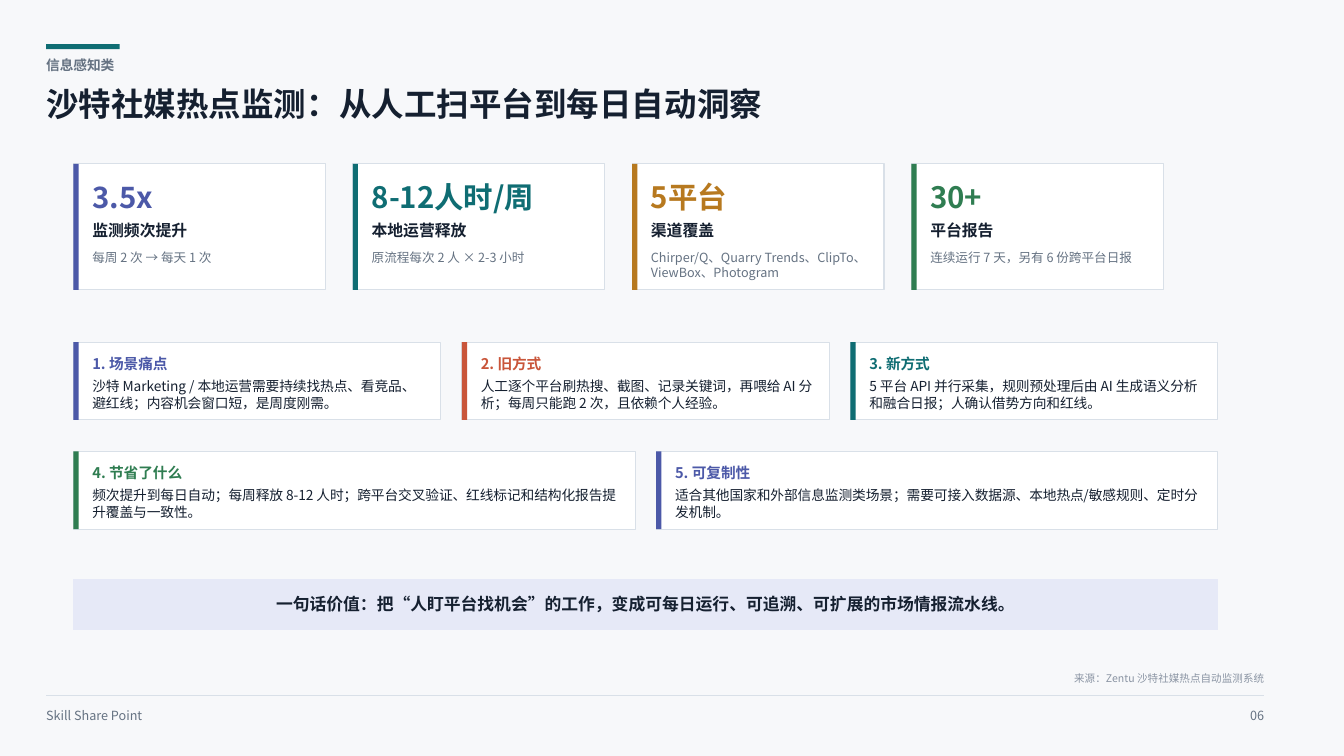
from lxml import etree
from pptx import Presentation
from pptx import util as u
from pptx.dml import color
from pptx.enum import shapes, text
from pptx.oxml import ns

COLS, ROWS = 640, 360
FONT = "Noto Sans CJK SC"
COLORS = {
    "page": "F7F8FA", "card": "FFFFFF", "rule": "D9E0E8", "band": "E6E9F7",
    "ink": "152030", "muted": "657282", "faint": "8A94A3",
    "indigo": "4C59A8", "teal": "0F6D73", "amber": "B7791F",
    "green": "2F7D51", "rust": "C9553A",
}
LEFT, RIGHT = 22, 602
BODY_LEFT, BODY_WIDTH = 35, 545
CARD_INDENT = 9

METRICS = [
    ("3.5x", "监测频次提升", "每周 2 次 → 每天 1 次", "indigo"),
    ("8-12人时/周", "本地运营释放", "原流程每次 2 人 × 2-3 小时", "teal"),
    ("5平台", "渠道覆盖", "Chirper/Q、Quarry Trends、ClipTo、ViewBox、Photogram", "amber"),
    ("30+", "平台报告", "连续运行 7 天，另有 6 份跨平台日报", "green"),
]
POINT_ROWS = [
    (163, [
        ("1. 场景痛点", "沙特 Marketing / 本地运营需要持续找热点、看竞品、避红线；"
         "内容机会窗口短，是周度刚需。", "indigo"),
        ("2. 旧方式", "人工逐个平台刷热搜、截图、记录关键词，再喂给 AI 分析；"
         "每周只能跑 2 次，且依赖个人经验。", "rust"),
        ("3. 新方式", "5 平台 API 并行采集，规则预处理后由 AI 生成语义分析和融合日报；"
         "人确认借势方向和红线。", "teal"),
    ]),
    (215, [
        ("4. 节省了什么", "频次提升到每日自动；每周释放 8-12 人时；"
         "跨平台交叉验证、红线标记和结构化报告提升覆盖与一致性。", "green"),
        ("5. 可复制性", "适合其他国家和外部信息监测类场景；"
         "需要可接入数据源、本地热点/敏感规则、定时分发机制。", "indigo"),
    ]),
]


def rgb(name):
    return color.RGBColor.from_string(COLORS[name])


class Board:
    """A slide laid out on a grid of COLS by ROWS cells."""

    def __init__(self, deck):
        self.cell_w = deck.slide_width / COLS
        self.cell_h = deck.slide_height / ROWS
        self.slide = deck.slides.add_slide(deck.slide_layouts[5])
        backdrop = self.slide.background.fill
        backdrop.solid()
        backdrop.fore_color.rgb = rgb("page")

    def place(self, col, row, cols, rows):
        return (round(col * self.cell_w), round(row * self.cell_h),
                round(cols * self.cell_w), round(rows * self.cell_h))

    def style(self, frame, words, size, ink, bold=False, align="LEFT"):
        frame.text = words
        frame.word_wrap = True
        frame.auto_size = text.MSO_AUTO_SIZE.NONE
        frame.vertical_anchor = text.MSO_ANCHOR.TOP
        frame.margin_left = frame.margin_right = 0
        frame.margin_top = frame.margin_bottom = 0
        paragraph = frame.paragraphs[0]
        paragraph.alignment = getattr(text.PP_ALIGN, align)
        for run in paragraph.runs:
            run.font.name = FONT
            run.font.size = u.Pt(size)
            run.font.bold = bold
            run.font.color.rgb = rgb(ink)
            east_asian = etree.Element(ns.qn("a:ea"), typeface=FONT)
            run.font._element.find(ns.qn("a:latin")).addnext(east_asian)

    def title(self, area, words):
        heading = self.slide.shapes.title
        heading.left, heading.top, heading.width, heading.height = self.place(*area)
        self.style(heading.text_frame, words, 23.25, "ink", True)

    def label(self, area, words, size, ink, bold=False, align="LEFT"):
        box = self.slide.shapes.add_textbox(*self.place(*area))
        self.style(box.text_frame, words, size, ink, bold, align)

    def block(self, area, fill, outline=None):
        rect = self.slide.shapes.add_shape(shapes.MSO_SHAPE.RECTANGLE, *self.place(*area))
        rect.shadow.inherit = False
        rect.fill.solid()
        rect.fill.fore_color.rgb = rgb(fill)
        if outline:
            rect.line.color.rgb = rgb(outline)
            rect.line.width = u.Pt(0.75)
        else:
            rect.line.fill.background()

    def rule(self, row):
        left, top, width, _ = self.place(LEFT, row, RIGHT - LEFT, 0)
        line = self.slide.shapes.add_connector(
            shapes.MSO_CONNECTOR.STRAIGHT, left, top, left + width, top)
        line.line.color.rgb = rgb("rule")
        line.line.width = u.Pt(0.75)
        etree.SubElement(line._element.spPr, ns.qn("a:effectLst"))

    def card(self, col, row, cols, rows, accent):
        self.block((col, row, cols, rows), "card", "rule")
        self.block((col, row, 2.5, rows), accent)

    def metric(self, col, row, cols, figure, name, detail, accent):
        self.card(col, row, cols, 60, accent)
        left, width = col + CARD_INDENT, cols - 14
        self.label((left, row + 7.5, width, 18), figure, 21, accent, True)
        self.label((left, row + 27, width, 12), name, 11.25, "ink", True)
        self.label((left, row + 41, width, 13), detail, 9, "muted")

    def point(self, col, row, cols, heading, detail, accent):
        self.card(col, row, cols, 37, accent)
        left, width = col + CARD_INDENT, cols - 16
        self.label((left, row + 6, width, 9), heading, 10.5, accent, True)
        self.label((left, row + 17, width, 16), detail, 9.75, "ink")


def main():
    deck = Presentation()
    deck.slide_width, deck.slide_height = u.Inches(13.33), u.Inches(7.5)
    board = Board(deck)

    board.block((LEFT, 21, 35, 2.5), "teal")
    board.label((LEFT, 27, 180, 12), "信息感知类", 9.75, "muted", True)
    board.title((LEFT, 40, 480, 24), "沙特社媒热点监测：从人工扫平台到每日自动洞察")

    for index, metric in enumerate(METRICS):
        board.metric(BODY_LEFT + index * 133, 78, 120, *metric)

    gap = 10
    for row, points in POINT_ROWS:
        width = (BODY_WIDTH - gap * (len(points) - 1)) / len(points)
        for index, point in enumerate(points):
            board.point(BODY_LEFT + index * (width + gap), row, width, *point)

    board.block((BODY_LEFT, 276, BODY_WIDTH, 24), "band", "band")
    board.label((BODY_LEFT + 13, 282.5, BODY_WIDTH - 26, 10),
                "一句话价值：把“人盯平台找机会”的工作，变成可每日运行、可追溯、可扩展的市场情报流水线。",
                12, "ink", True, "CENTER")

    board.label((RIGHT - 192, 320, 192, 8), "来源：Zentu 沙特社媒热点自动监测系统",
                7.5, "faint", align="RIGHT")
    board.rule(331.25)
    board.label((LEFT, 337, 125, 9), "Skill Share Point", 9, "muted")
    board.label((RIGHT - 22, 337, 22, 9), "06", 9, "muted", align="RIGHT")

    deck.save("out.pptx")


if __name__ == "__main__":
    main()
